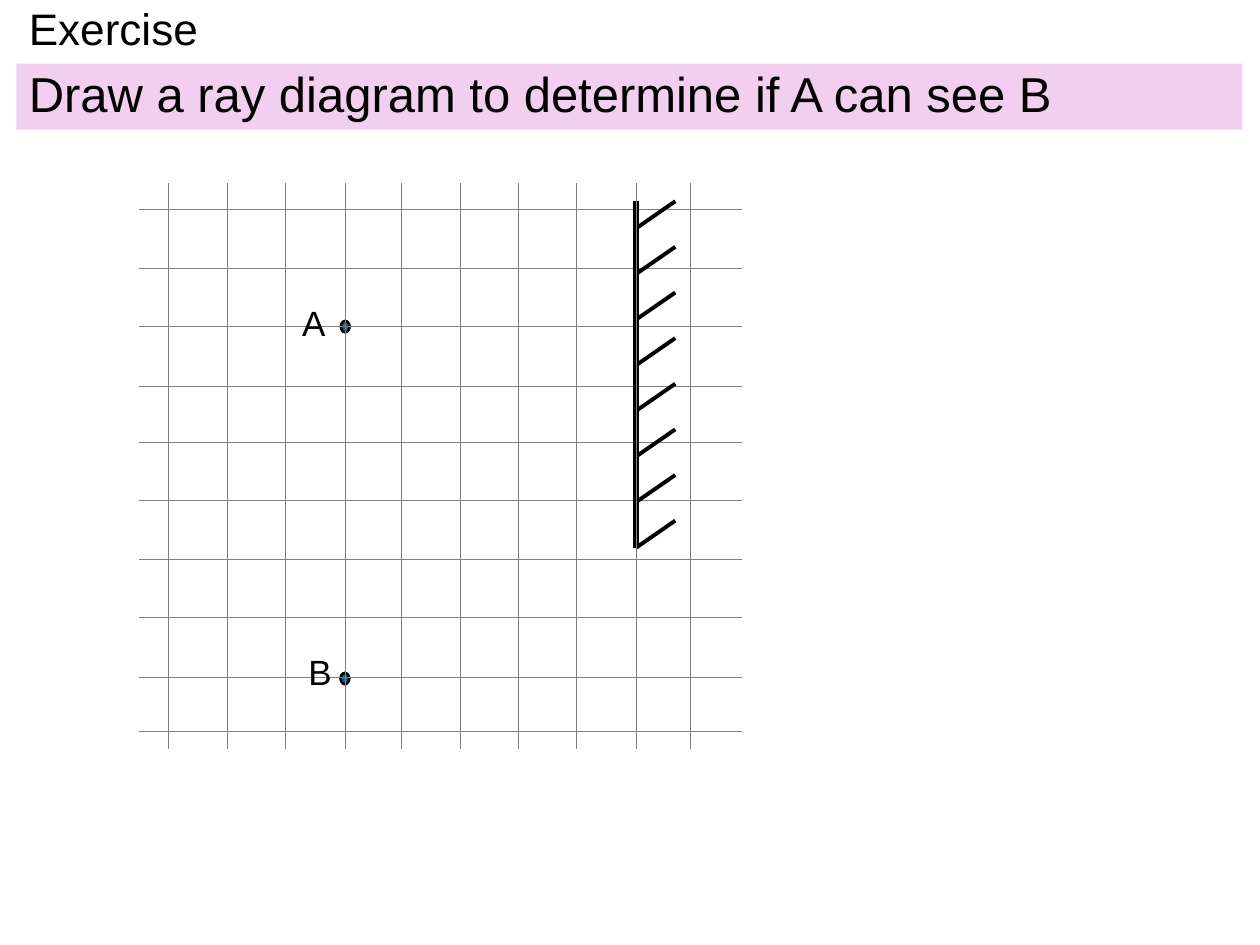
from dataclasses import dataclass

from lxml.etree import SubElement
from pptx import Presentation
from pptx.dml.color import RGBColor as Color
from pptx.enum.shapes import MSO_CONNECTOR as Connector, MSO_SHAPE as Preset
from pptx.enum.text import MSO_ANCHOR as Anchor
from pptx.oxml.ns import qn
from pptx.util import Pt


@dataclass(frozen=True)
class Theme:
    font: str = "Arial"
    ink: str = "000000"
    grid: str = "808080"
    band: str = "F2CFEE"
    dot: str = "156082"
    title_size: float = 25.2
    task_size: float = 28
    label_size: float = 20
    grid_width: float = 0.25
    mirror_width: float = 3
    hatch_width: float = 2.25
    dot_width: float = 1.5


@dataclass(frozen=True)
class Box:
    left: float
    top: float
    width: float
    height: float

    def lengths(self) -> tuple:
        return Pt(self.left), Pt(self.top), Pt(self.width), Pt(self.height)


@dataclass(frozen=True)
class Line:
    x1: float
    y1: float
    x2: float
    y2: float
    color: str
    width: float


@dataclass(frozen=True)
class Caption:
    text: str
    box: Box
    size: float
    spacing: float = 1.0
    fill: str = ""
    wrap: bool = True
    anchor: Anchor = Anchor.MIDDLE


THEME = Theme()


def draw_line(page, line: Line) -> None:
    connector = page.shapes.add_connector(
        Connector.STRAIGHT, Pt(line.x1), Pt(line.y1), Pt(line.x2), Pt(line.y2))
    connector.line.color.rgb = Color.from_string(line.color)
    connector.line.width = Pt(line.width)
    SubElement(connector._element.spPr, qn("a:effectLst"))


def draw_caption(page, caption: Caption) -> None:
    box = page.shapes.add_textbox(*caption.box.lengths())
    if caption.fill:
        box.fill.solid()
        box.fill.fore_color.rgb = Color.from_string(caption.fill)
    frame = box.text_frame
    frame.word_wrap = caption.wrap
    frame.vertical_anchor = caption.anchor
    frame.text = caption.text
    para = frame.paragraphs[0]
    para.line_spacing = caption.spacing
    font = para.runs[0].font
    font.name = THEME.font
    font.size = Pt(caption.size)
    font.color.rgb = Color.from_string(THEME.ink)


def draw_dot(page, box: Box) -> None:
    dot = page.shapes.add_shape(Preset.OVAL, *box.lengths())
    dot.shadow.inherit = False
    dot.fill.solid()
    dot.fill.fore_color.rgb = Color.from_string(THEME.dot)
    dot.line.color.rgb = Color.from_string(THEME.ink)
    dot.line.width = Pt(THEME.dot_width)


# Heading and task
HEADINGS = [
    Caption("Exercise", Box(9.4, 0, 520.6, 36), THEME.title_size, 0.9),
    Caption("Draw a ray diagram to determine if A can see B",
            Box(9.4, 36.3, 700.6, 37.8), THEME.task_size, 0.9, THEME.band),
]

# Observer and object
DOTS = [Box(194.8, 183.4, 5, 6.5), Box(194.6, 384.5, 5, 6.5)]
LABELS = [
    Caption(text, Box(left, top, 28, 31.5), THEME.label_size, wrap=False, anchor=Anchor.TOP)
    for text, left, top in (("A", 165.6, 168.5), ("B", 169.2, 368.2))
]

# Grid: rows and columns share the same offsets
OFFSETS = (0, 33.4, 66.6, 101, 133, 166.5, 199.7, 232.9, 267.5, 298.2)
FIRST_ROW, FIRST_COLUMN = 119.6, 96.3
GRID_LEFT, GRID_RIGHT, GRID_TOP, GRID_BOTTOM = 79.4, 424, 104.5, 427.8
ROWS = [Line(GRID_LEFT, FIRST_ROW + step, GRID_RIGHT, FIRST_ROW + step,
             THEME.grid, THEME.grid_width) for step in OFFSETS]
COLUMNS = [Line(FIRST_COLUMN + step, GRID_BOTTOM, FIRST_COLUMN + step, GRID_TOP,
                THEME.grid, THEME.grid_width) for step in OFFSETS]

# Mirror with hatching on its back
MIRROR_X, MIRROR_TOP, MIRROR_BOTTOM = 363.5, 115, 313.3
HATCH_COUNT, HATCH_GAP, HATCH_RUN, HATCH_RISE = 8, 26.07, 22.4, 15.5
MIRROR = [Line(MIRROR_X, MIRROR_TOP, MIRROR_X, MIRROR_BOTTOM, THEME.ink, THEME.mirror_width)]
for index in range(HATCH_COUNT):
    tip = MIRROR_TOP + index * HATCH_GAP
    MIRROR.append(Line(MIRROR_X, tip + HATCH_RISE, MIRROR_X + HATCH_RUN, tip,
                       THEME.ink, THEME.hatch_width))


def main() -> None:
    deck = Presentation()
    deck.slide_width, deck.slide_height = Pt(720), Pt(540)
    page = deck.slides.add_slide(deck.slide_layouts[6])

    for heading in HEADINGS:
        draw_caption(page, heading)
    for dot in DOTS:
        draw_dot(page, dot)
    for line in ROWS:
        draw_line(page, line)
    for label in LABELS:
        draw_caption(page, label)
    for line in MIRROR + COLUMNS:
        draw_line(page, line)

    deck.save("out.pptx")


if __name__ == "__main__":
    main()
